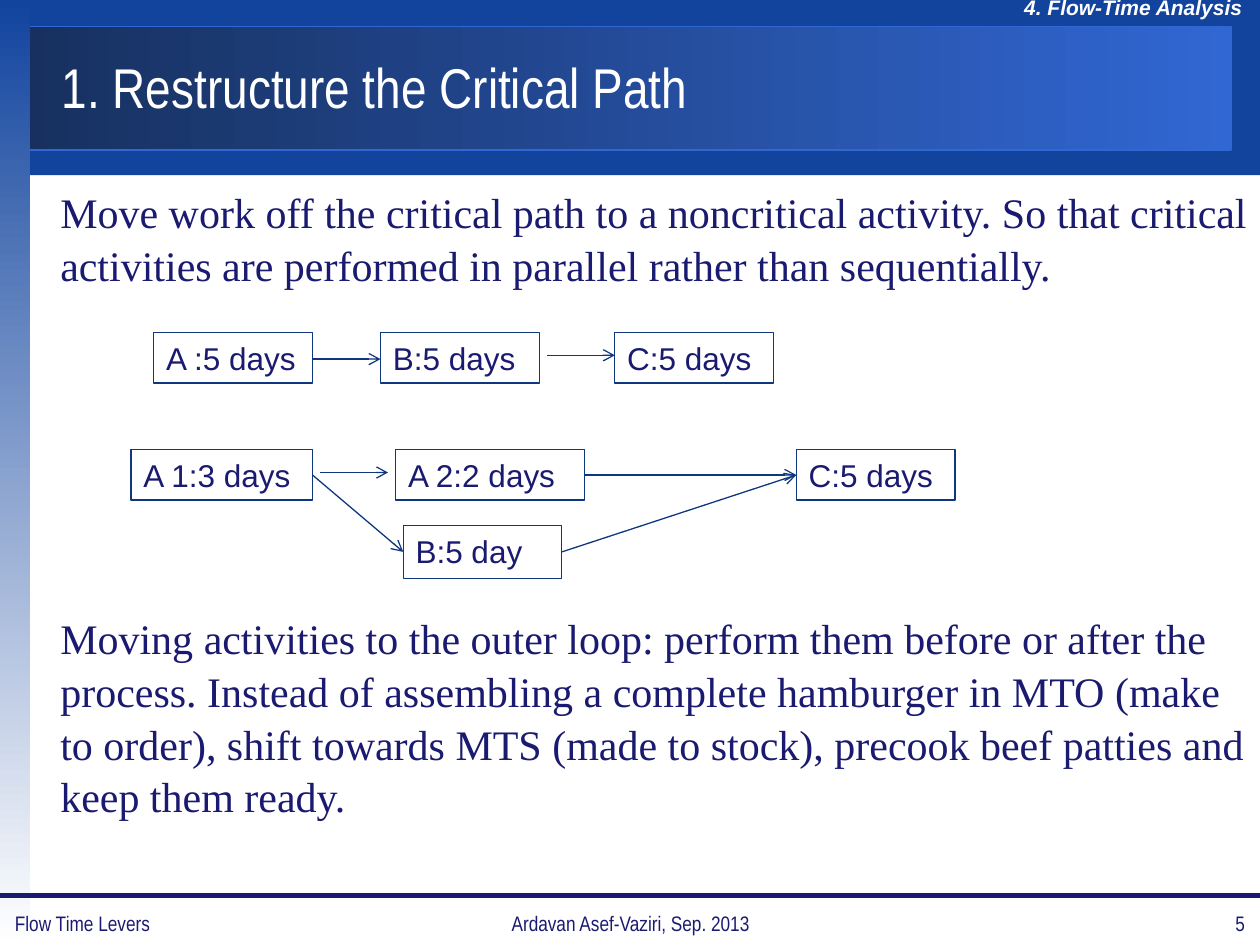
from lxml import etree
from pptx import Presentation
from pptx.dml.color import RGBColor
from pptx.enum.shapes import MSO_CONNECTOR, MSO_SHAPE
from pptx.enum.text import MSO_ANCHOR, PP_ALIGN
from pptx.oxml.ns import qn
from pptx.util import Inches, Pt

RECT = MSO_SHAPE.RECTANGLE
LINE = MSO_CONNECTOR.STRAIGHT
TOP, MIDDLE = MSO_ANCHOR.TOP, MSO_ANCHOR.MIDDLE
LEFT, CENTER, RIGHT = PP_ALIGN.LEFT, PP_ALIGN.CENTER, PP_ALIGN.RIGHT
COLORS = {
    "band": "12449E", "deep": "17305F", "bright": "3167D3",
    "ink": "1A1A70", "edge": "0E3780", "white": "FFFFFF",
}
SANS, NARROW, SERIF = "Arial", "Arial Narrow", "Times New Roman"


def color(name):
    """Return the named colour."""
    return RGBColor.from_string(COLORS[name])


def inches(box):
    """Turn a box of numbers into lengths."""
    return [Inches(n) for n in box]


def write(shape, text, size, font, tint="ink", align=LEFT, anchor=TOP, wrap=True):
    """Put one run of text in a shape and return the run and its paragraph."""
    frame = shape.text_frame
    frame.word_wrap = wrap
    frame.vertical_anchor = anchor
    para = frame.paragraphs[0]
    para.alignment = align
    run = para.add_run()
    run.text = text
    run.font.size = Pt(size)
    run.font.name = font
    run.font.color.rgb = color(tint)
    return run, para


def add_rect(slide, box, fill=None, edge=None):
    """Add a rectangle; a pair of colours and an angle makes a gradient."""
    rect = slide.shapes.add_shape(RECT, *inches(box))
    rect.shadow.inherit = False
    if fill is None:
        rect.fill.background()
    elif isinstance(fill, str):
        rect.fill.solid()
        rect.fill.fore_color.rgb = color(fill)
    else:
        first, last, angle = fill
        rect.fill.gradient()
        rect.fill.gradient_angle = angle
        for stop, name in zip(rect.fill.gradient_stops, (first, last)):
            stop.color.rgb = color(name)
    if edge:
        rect.line.color.rgb = color(edge)
        rect.line.width = Pt(0.75)
    else:
        rect.line.fill.background()
    return rect


def add_line(slide, start, end, tint="edge", width=0.75, arrow=True):
    """Draw a straight line, with an open arrowhead if asked."""
    line = slide.shapes.add_connector(LINE, *inches(start + end))
    line.line.color.rgb = color(tint)
    line.line.width = Pt(width)
    if arrow:
        tail = etree.SubElement(line.line._get_or_add_ln(), qn("a:tailEnd"))
        tail.set("type", "arrow")
    etree.SubElement(line.element.spPr, qn("a:effectLst"))


def add_frame(slide, width, height):
    """Draw the header bands and the side strip."""
    add_rect(slide, (0.2, 0, width - 0.2, 1.39), "band")
    add_rect(slide, (0.2, 0.21, 9.57, 0.98), ("deep", "bright", 0), "bright")
    add_rect(slide, (0, 0, 0.24, height), ("band", "white", 270))
    tag = slide.shapes.add_textbox(*inches((8.03, -0.09, 2.09, 0.3)))
    run, _ = write(tag, "4. Flow-Time Analysis", 12, SANS, "white", wrap=False)
    run.font.bold = run.font.italic = True


def set_title(slide, box, text):
    """Place the title above the bands."""
    title = slide.shapes.title
    title.left, title.top, title.width, title.height = inches(box)
    write(title, text, 32, NARROW, "white", anchor=MIDDLE)
    title.element.getparent().append(title.element)


def add_body(slide, box, text):
    """Add a block of body text."""
    body = slide.shapes.add_textbox(*inches(box))
    _, para = write(body, text, 24, SERIF)
    para.line_spacing = 1.05


def add_step(slide, box, text):
    """Add one activity box."""
    write(add_rect(slide, box, edge="edge"), text, 18, SANS, wrap=False)


def add_chain(slide, left, top):
    """Draw the three activities in sequence."""
    wide, high = 1.26, 0.4
    steps = ((0, "A :5 days"), (1.8, "B:5 days"), (3.66, "C:5 days"))
    for shift, text in steps:
        add_step(slide, (left + shift, top, wide, high), text)
    for shift, drop in ((wide, 0.21), (3.12, 0.18)):
        x, y = left + shift, top + drop
        add_line(slide, (x, y), (x + 0.54, y))


def add_split(slide, left, top):
    """Draw the activities with B beside the second part of A."""
    steps = (
        (0, 0, 1.44, 0.4, "A 1:3 days"), (2.1, 0, 1.5, 0.4, "A 2:2 days"),
        (2.16, 0.6, 1.26, 0.42, "B:5 day"), (5.28, 0, 1.26, 0.4, "C:5 days"),
    )
    for x, y, wide, high, text in steps:
        add_step(slide, (left + x, top + y, wide, high), text)
    links = (
        (1.44, 0.2, 2.16, 0.81), (1.5, 0.18, 2.04, 0.18),
        (3.42, 0.81, 5.28, 0.2), (3.6, 0.2, 5.28, 0.2),
    )
    for x1, y1, x2, y2 in links:
        add_line(slide, (left + x1, top + y1), (left + x2, top + y2))


def add_footer(slide, width, top):
    """Draw the footer rule and its three texts."""
    add_line(slide, (0, top), (width, top), "ink", 3, False)
    parts = (
        (0.02, 2.33, "Flow Time Levers", LEFT),
        (3.42, 3.17, "Ardavan Asef-Vaziri, Sep. 2013", CENTER),
        (7.65, 2.33, "5", RIGHT),
    )
    for left, wide, text, align in parts:
        box = slide.shapes.add_textbox(*inches((left, top + 0.02, wide, 0.4)))
        write(box, text, 12, NARROW, align=align, anchor=MIDDLE)


def main():
    """Build the slide and save it."""
    deck = Presentation()
    width, height = 10, 7.5
    deck.slide_width, deck.slide_height = Inches(width), Inches(height)
    slide = deck.slides.add_slide(deck.slide_layouts[5])
    add_frame(slide, width, height)
    set_title(slide, (0.39, 0.21, 9.29, 0.94), "1. Restructure the Critical Path")
    add_body(slide, (0.38, 1.41, 9.62, 1.31),
             "Move work off the critical path to a noncritical activity. "
             "So that critical activities are performed in parallel rather "
             "than sequentially.")
    add_body(slide, (0.38, 4.79, 9.62, 1.72),
             "Moving activities to the outer loop: perform them before or "
             "after the process. Instead of assembling a complete hamburger "
             "in MTO (make to order), shift towards MTS (made to stock), "
             "precook beef patties and keep them ready.")
    add_chain(slide, 1.22, 2.64)
    add_split(slide, 1.04, 3.57)
    add_footer(slide, width, 7.11)
    deck.save("out.pptx")


if __name__ == "__main__":
    main()
